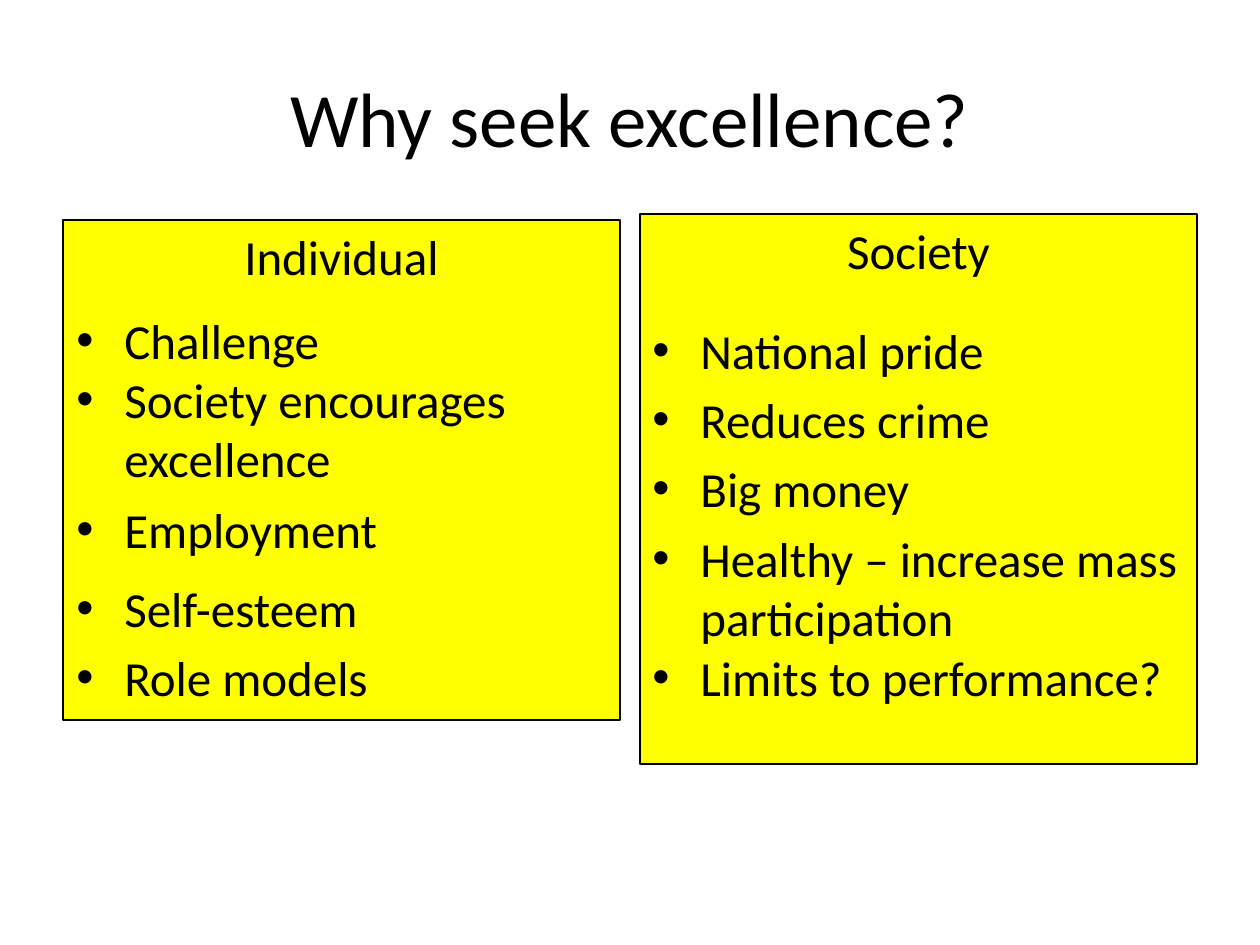
from lxml import etree
from pptx import Presentation
from pptx.dml.color import RGBColor
from pptx.enum.shapes import MSO_SHAPE
from pptx.enum.text import MSO_ANCHOR, PP_ALIGN
from pptx.oxml.ns import qn
from pptx.util import Pt

EMU_PER_PX = 914400 / 126
RECTANGLE = MSO_SHAPE.RECTANGLE
TOP, MIDDLE = MSO_ANCHOR.TOP, MSO_ANCHOR.MIDDLE
LEFT, CENTER = PP_ALIGN.LEFT, PP_ALIGN.CENTER
BLACK, YELLOW = "000000", "FFFF00"
HANGING = 48
COLUMN_WIDTH = 557


def px(*lengths):
    return [round(length * EMU_PER_PX) for length in lengths]


def write(shape, text, size, align, anchor=TOP, hanging=True, bullet=None):
    frame = shape.text_frame
    frame.word_wrap = True
    frame.vertical_anchor = anchor
    paragraph = frame.paragraphs[0]
    paragraph.text = text
    paragraph.alignment = align
    for name, value in {"name": "Calibri", "size": Pt(size)}.items():
        setattr(paragraph.runs[0].font, name, value)
    paragraph.runs[0].font.color.rgb = RGBColor.from_string(BLACK)
    if hanging:
        properties = paragraph._p.get_or_add_pPr()
        indent = px(HANGING)[0]
        properties.set("marL", str(indent))
        properties.set("indent", str(-indent))
        space = etree.SubElement(properties, qn("a:spcBef"))
        etree.SubElement(space, qn("a:spcPct")).set("val", "20000")
        if bullet:
            etree.SubElement(properties, qn("a:buFont")).set("typeface", "Arial")
            etree.SubElement(properties, qn("a:buChar")).set("char", bullet)


presentation = Presentation()
presentation.slide_width, presentation.slide_height = px(1260, 945)
slide = presentation.slides.add_slide(presentation.slide_layouts[6])

title = slide.shapes.add_textbox(*px(63, 38, 1134, 157))
write(title, "Why seek excellence?", 44, CENTER, MIDDLE, hanging=False)

columns = [
    ("Individual", 63, 220, 500, 64, [
        ("Challenge", 304, 77),
        ("Society encourages excellence", 363, 127),
        ("Employment", 493, 69),
        ("Self-esteem", 572, 69),
        ("Role models", 641, 77),
    ]),
    ("Society", 640, 214, 550, 640, [
        ("National pride", 314, 79),
        ("Reduces crime", 383, 69),
        ("Big money", 452, 79),
        ("Healthy – increase mass participation", 522, 129),
        ("Limits to performance?", 641, 129),
    ]),
]

for heading, left, top, height, reason_left, reasons in columns:
    panel = slide.shapes.add_shape(RECTANGLE, *px(left, top, COLUMN_WIDTH, height))
    panel.shadow.inherit = False
    panel.fill.solid()
    panel.fill.fore_color.rgb = RGBColor.from_string(YELLOW)
    panel.line.color.rgb = RGBColor.from_string(BLACK)
    panel.line.width = Pt(0.75)
    write(panel, heading, 28, CENTER)
    for reason, reason_top, reason_height in reasons:
        box = slide.shapes.add_textbox(
            *px(reason_left, reason_top, COLUMN_WIDTH, reason_height))
        write(box, reason, 28, LEFT, bullet="•")

presentation.save("out.pptx")
